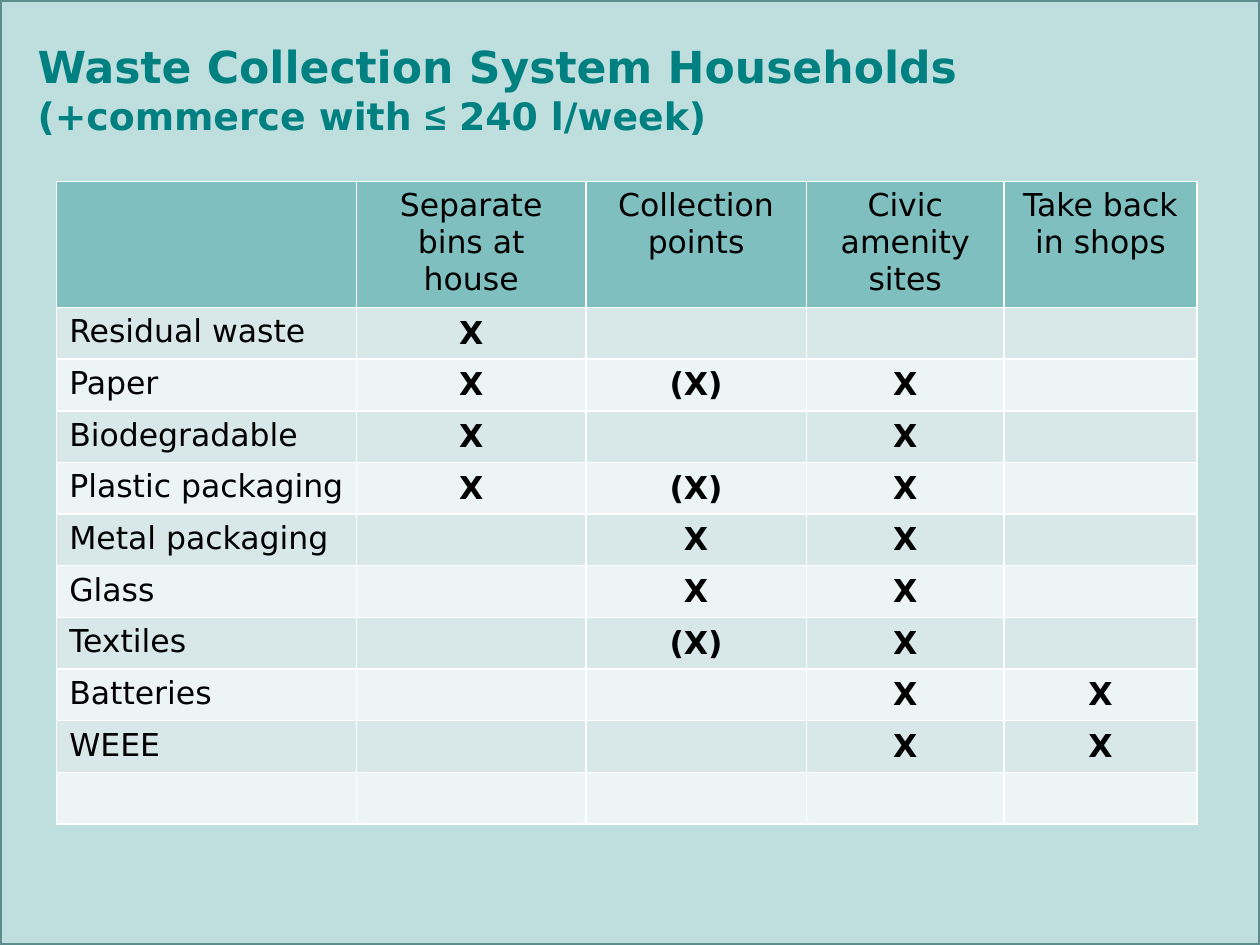
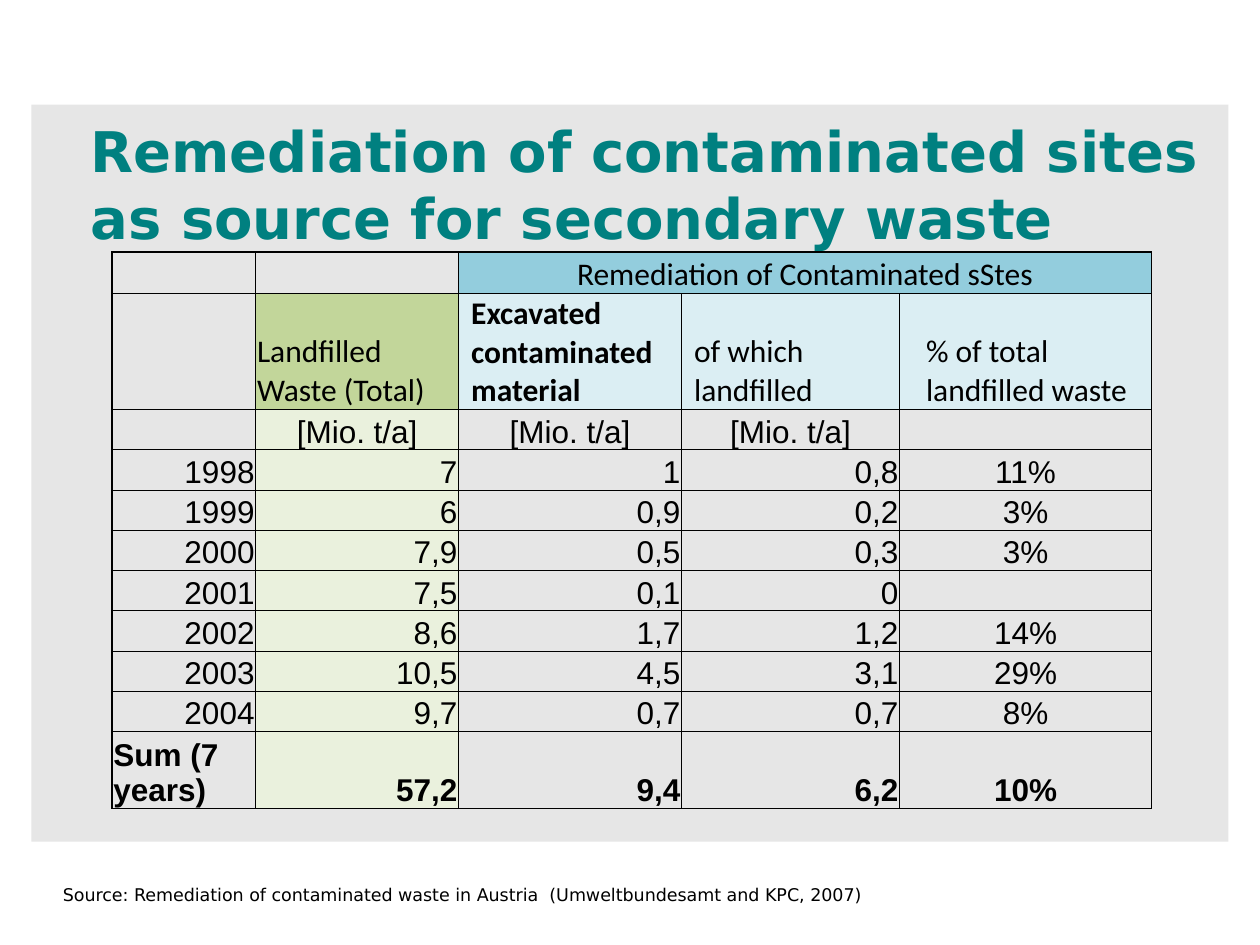
from dataclasses import dataclass
from typing import Callable, Optional

from lxml import etree
from pptx import Presentation
from pptx.dml.color import RGBColor
from pptx.enum.shapes import MSO_SHAPE
from pptx.enum.text import MSO_ANCHOR, PP_ALIGN
from pptx.oxml.ns import qn
from pptx.util import Inches, Pt

RECT = MSO_SHAPE.RECTANGLE
TOP, MIDDLE, BOTTOM = MSO_ANCHOR.TOP, MSO_ANCHOR.MIDDLE, MSO_ANCHOR.BOTTOM
LEFT, CENTER, RIGHT = PP_ALIGN.LEFT, PP_ALIGN.CENTER, PP_ALIGN.RIGHT


@dataclass(frozen=True)
class Theme:
    main: str = "DejaVu Sans"
    head: str = "Calibri"
    data: str = "Arial"
    ink: str = "000000"
    white: str = "FFFFFF"
    teal: str = "008080"
    edge: str = "5E8D8D"
    mint: str = "BFDFDF"
    gray: str = "E6E6E6"
    header: str = "7FBFBF"
    bands: tuple = ("D8E8E8", "ECF4F4")
    blue: str = "93CDDD"
    sky: str = "DBEEF3"
    green: str = "C2D69A"
    lime: str = "EAF1DD"
    large: float = 32
    title: float = 25.2
    sub: float = 21.6
    body: float = 18
    note: float = 10


THEME = Theme()


@dataclass(frozen=True)
class Box:
    left: float
    top: float
    width: float
    height: float

    def place(self) -> tuple:
        return tuple(Inches(n) for n in (self.left, self.top, self.width, self.height))


@dataclass(frozen=True)
class Span:
    text: str
    size: float
    font: str = THEME.main
    color: str = THEME.teal
    bold: bool = True


@dataclass(frozen=True)
class Style:
    fill: Optional[str] = None
    font: str = THEME.main
    bold: bool = False
    align: PP_ALIGN = LEFT
    anchor: MSO_ANCHOR = TOP
    inset: Optional[tuple] = None  # left, top, right, bottom


@dataclass(frozen=True)
class Grid:
    box: Box
    cols: list
    rows: list
    data: list
    style: Callable[[int, int], Style]
    line: str
    weight: Callable[[int, int], dict]


def rgb(code: str) -> RGBColor:
    return RGBColor.from_string(code)


def set_font(font, name: str, size: float, color: str, bold: bool) -> None:
    font.name, font.size, font.bold = name, Pt(size), bold
    font.color.rgb = rgb(color)


def add_panel(slide, box: Box, fill: str, line: Optional[str] = None) -> None:
    panel = slide.shapes.add_shape(RECT, *box.place())
    panel.shadow.inherit = False
    panel.fill.solid()
    panel.fill.fore_color.rgb = rgb(fill)
    if line:
        panel.line.color.rgb = rgb(line)
        panel.line.width = Pt(2)
    else:
        panel.line.fill.background()


def add_text(slide, box: Box, lines: list[list[Span]], anchor=TOP) -> None:
    frame = slide.shapes.add_textbox(*box.place()).text_frame
    frame.word_wrap = True
    frame.vertical_anchor = anchor
    para = frame.paragraphs[0]
    for n, spans in enumerate(lines):
        if n:
            para.add_line_break()
        for span in spans:
            run = para.add_run()
            run.text = span.text
            set_font(run.font, span.font, span.size, span.color, span.bold)


def set_edges(cell, color: str, weights: dict) -> None:
    props = cell._tc.get_or_add_tcPr()
    for side in "LRTB":
        line = etree.SubElement(props, qn(f"a:ln{side}"), w=str(Pt(weights[side])))
        fill = etree.SubElement(line, qn("a:solidFill"))
        etree.SubElement(fill, qn("a:srgbClr"), val=color)


def set_cell(cell, text: str, style: Style) -> None:
    if style.fill:
        cell.fill.solid()
        cell.fill.fore_color.rgb = rgb(style.fill)
    else:
        cell.fill.background()
    cell.vertical_anchor = style.anchor
    if style.inset:
        (cell.margin_left, cell.margin_top, cell.margin_right,
         cell.margin_bottom) = map(Inches, style.inset)
    cell.text_frame.text = text
    para = cell.text_frame.paragraphs[0]
    para.alignment = style.align
    set_font(para.font, style.font, THEME.body, THEME.ink, style.bold)
    for run in para.runs:
        set_font(run.font, style.font, THEME.body, THEME.ink, style.bold)


def add_grid(slide, grid: Grid):
    shape = slide.shapes.add_table(len(grid.rows), len(grid.cols), *grid.box.place())
    table = shape.table
    table.first_row = table.horz_banding = False
    for col, width in zip(table.columns, grid.cols):
        col.width = Inches(width)
    for r, height in enumerate(grid.rows):
        table.rows[r].height = Inches(height)
        for c, text in enumerate(grid.data[r]):
            cell = table.cell(r, c)
            set_edges(cell, grid.line, grid.weight(r, c))
            set_cell(cell, text, grid.style(r, c))
    return table


# Waste collection table
WASTE = [
    ["", "Separate bins at house", "Collection points", "Civic amenity sites",
     "Take back in shops"],
    ["Residual waste", "X", "", "", ""],
    ["Paper", "X", "(X)", "X", ""],
    ["Biodegradable", "X", "", "X", ""],
    ["Plastic packaging", "X", "(X)", "X", ""],
    ["Metal packaging", "", "X", "X", ""],
    ["Glass", "", "X", "X", ""],
    ["Textiles", "", "(X)", "X", ""],
    ["Batteries", "", "", "X", "X"],
    ["WEEE", "", "", "X", "X"],
    [""] * 5,
]


def waste_style(r: int, c: int) -> Style:
    if r == 0:
        return Style(THEME.header, align=CENTER)
    band = THEME.bands[(r - 1) % 2]
    if c == 0:
        return Style(band)
    return Style(band, bold=True, align=CENTER, anchor=MIDDLE)


def waste_weight(r: int, c: int) -> dict:
    return dict.fromkeys("LRTB", 1)


# Remediation table
UNIT = "[Mio. t/a]"
SITES = [
    ["", "", "Remediation of Contaminated sStes", "", ""],
    ["", "Landfilled Waste (Total)", "Excavated contaminated material",
     "of which landfilled", "% of total landfilled waste"],
    ["", UNIT, UNIT, UNIT, ""],
    ["1998", "7", "1", "0,8", "11%"],
    ["1999", "6", "0,9", "0,2", "3%"],
    ["2000", "7,9", "0,5", "0,3", "3%"],
    ["2001", "7,5", "0,1", "0", ""],
    ["2002", "8,6", "1,7", "1,2", "14%"],
    ["2003", "10,5", "4,5", "3,1", "29%"],
    ["2004", "9,7", "0,7", "0,7", "8%"],
    ["Sum (7 years)", "57,2", "9,4", "6,2", "10%"],
]
LAST = len(SITES) - 1


def sites_style(r: int, c: int) -> Style:
    fill, align, indent = None, RIGHT, 0
    if r == 0:
        fill, align = (THEME.blue if c >= 2 else None), CENTER
    elif r == 1:
        fill = (None, THEME.green, THEME.sky, THEME.sky, THEME.sky)[c]
        align, indent = LEFT, (0, 0, 0.09, 0.09, 0.2)[c]
    else:
        fill = THEME.lime if c == 1 else None
        if r == 2 or c == 4:
            align = CENTER
        elif r == LAST and c == 0:
            align = LEFT
    return Style(fill, THEME.head if r < 2 else THEME.data,
                 r == LAST or (r, c) == (1, 2), align, BOTTOM,
                 (0.01 + indent, 0.01, 0.01, 0))


def sites_weight(r: int, c: int) -> dict:
    def pick(heavy: bool) -> float:
        return 1 if heavy else 0.5

    return {
        "L": pick(c in (0, 2)),
        "R": pick(c in (1, 4)),
        "T": pick(r == 0 or (r == 1 and c < 2)),
        "B": pick(r == LAST or (r == 0 and c < 2)),
    }


def draw_waste(slide) -> None:
    add_panel(slide, Box(0, 0, 10, 7.5), THEME.mint, THEME.edge)
    add_text(slide, Box(0.2, 0.43, 9.3, 0.55), [
        [Span("Waste Collection System Households", THEME.title)],
        [Span("(+commerce with ", THEME.sub), Span("≤", THEME.sub, THEME.data),
         Span(" 240 l/week)", THEME.sub)],
    ], MIDDLE)
    add_grid(slide, Grid(Box(0.45, 1.44, 9.05, 5.06), [2.38, 1.82, 1.75, 1.57, 1.53],
                         [0.97] + [0.41] * 10, WASTE, waste_style,
                         THEME.white, waste_weight))


def draw_sites(slide) -> None:
    add_panel(slide, Box(0.25, 0.83, 9.5, 5.85), THEME.gray)
    add_text(slide, Box(0.62, 0.83, 9, 1.25), [[Span(
        "Remediation of contaminated sites as source for secondary waste",
        THEME.large)]], MIDDLE)
    table = add_grid(slide, Grid(Box(0.89, 2, 8.25, 4.4), [1.14, 1.61, 1.77, 1.73, 2],
                                 [0.33, 0.92] + [0.32] * 8 + [0.57], SITES,
                                 sites_style, THEME.ink, sites_weight))
    table.cell(0, 2).merge(table.cell(0, 4))
    add_text(slide, Box(0.4, 6.97, 9.45, 0.27), [[Span(
        "Source: Remediation of contaminated waste in Austria  "
        "(Umweltbundesamt and KPC, 2007)",
        THEME.note, color=THEME.ink, bold=False)]])


def main() -> None:
    deck = Presentation()
    deck.slide_width, deck.slide_height = Inches(10), Inches(7.5)
    blank = deck.slide_layouts[6]
    for draw in (draw_waste, draw_sites):
        draw(deck.slides.add_slide(blank))
    deck.save("out.pptx")


if __name__ == "__main__":
    main()
